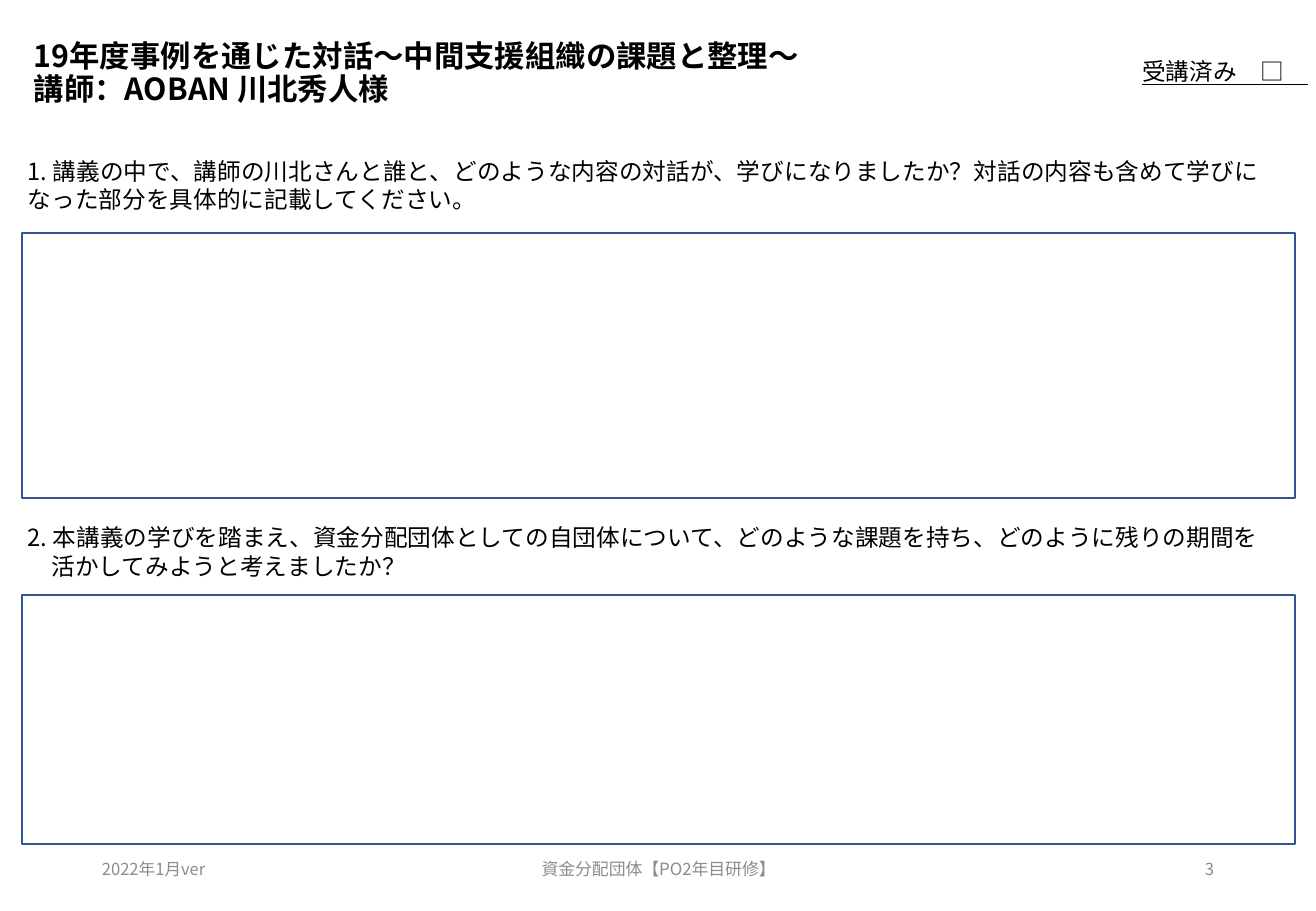
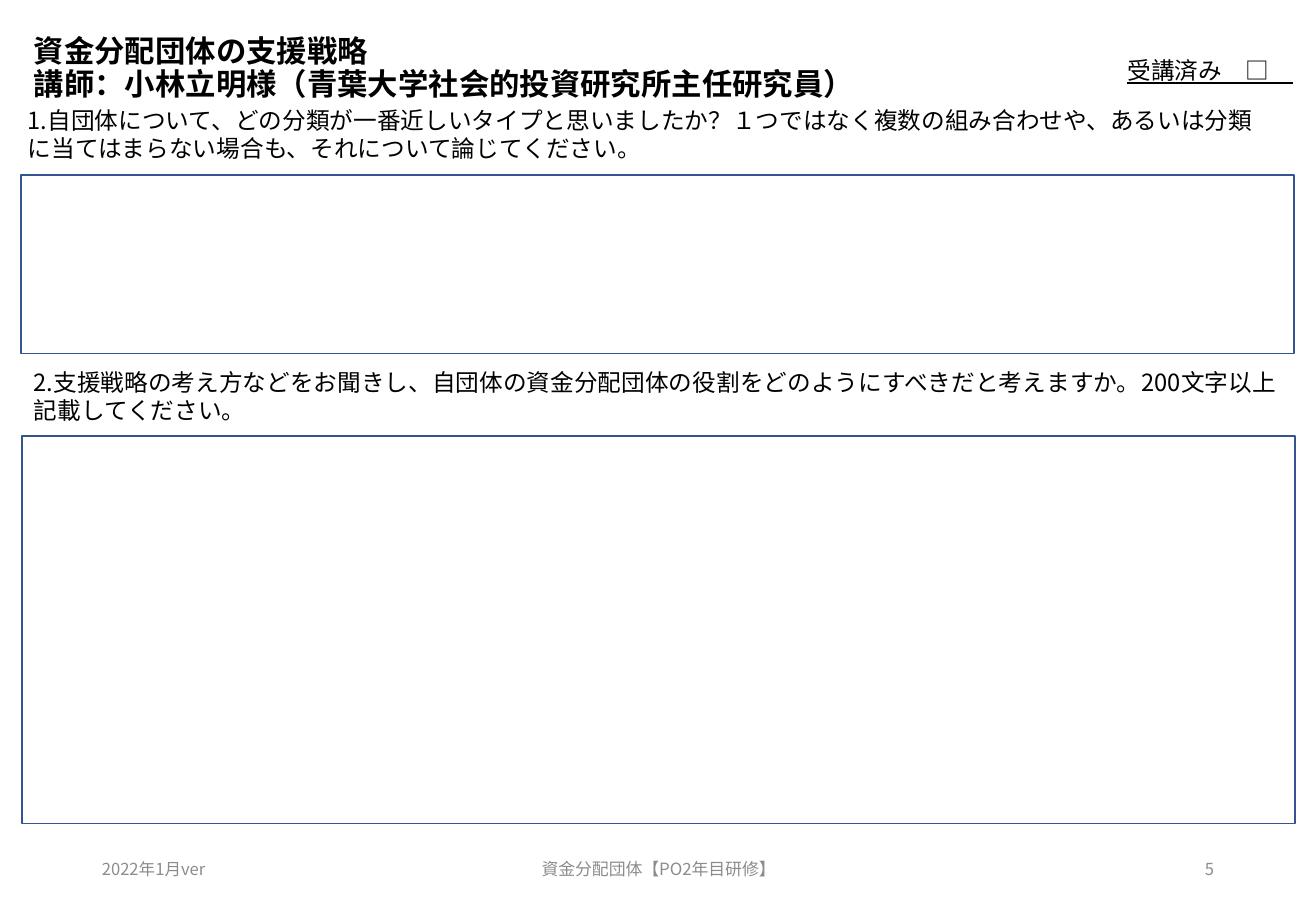
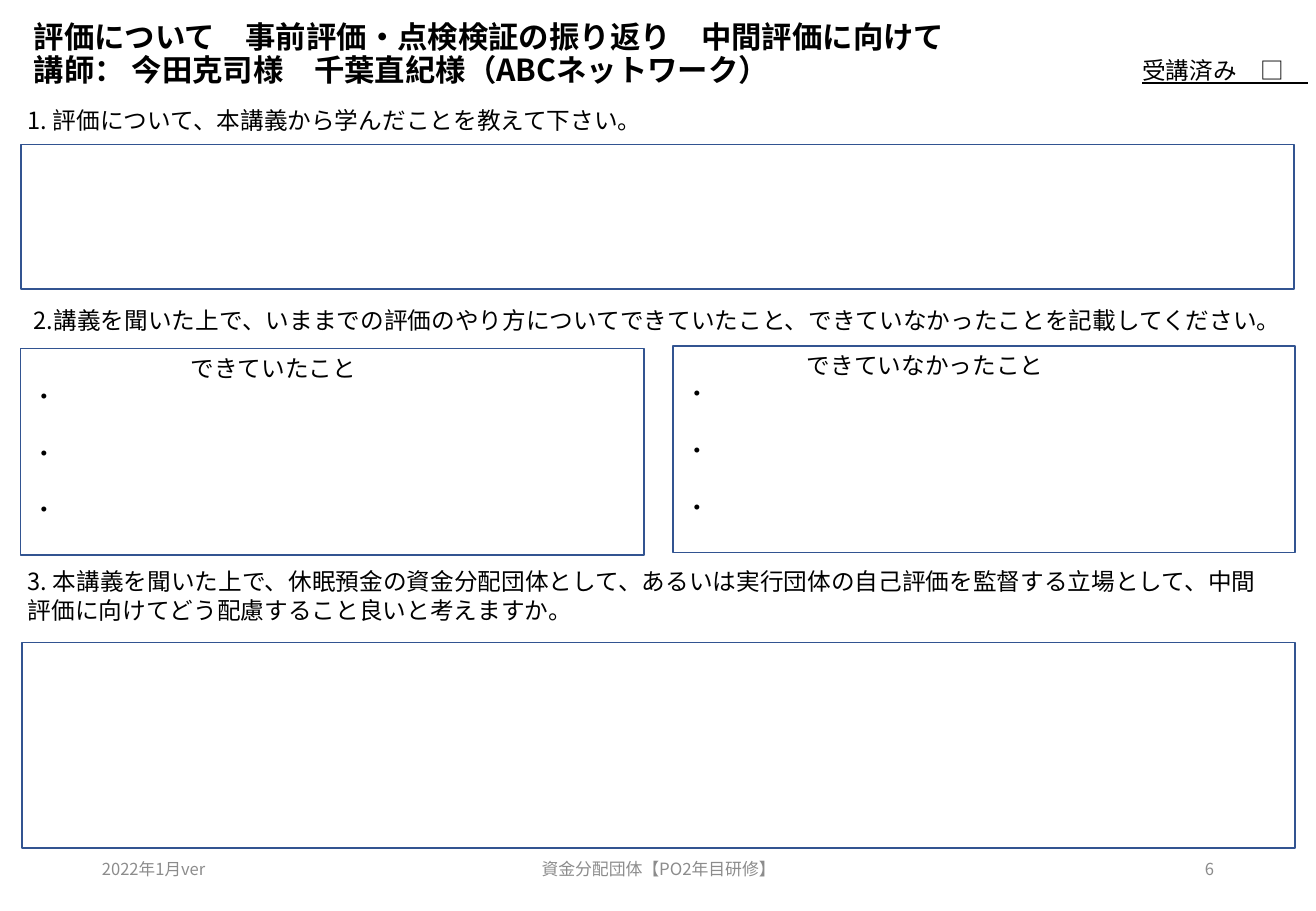
from lxml.etree import SubElement
from pptx import Presentation
from pptx.dml.color import RGBColor
from pptx.enum.shapes import MSO_SHAPE
from pptx.enum.text import MSO_ANCHOR, PP_ALIGN
from pptx.oxml.ns import qn
from pptx.util import Inches, Pt

FONT = "Noto Sans CJK JP"
BLACK = RGBColor(0x00, 0x00, 0x00)
GRAY = RGBColor(0x8C, 0x8C, 0x8C)
WHITE = RGBColor(0xFF, 0xFF, 0xFF)
BLUE = RGBColor(0x32, 0x54, 0x91)

BODY = 14
LEFT = 0.18
WIDE = 10.48
PAD = 0.1
FOOT_TOP = 6.95


def add_run(para, text, size=BODY, color=BLACK, bold=False, under=False):
    run = para.add_run()
    run.text = text
    font = run.font
    font.name, font.size, font.bold, font.underline = FONT, Pt(size), bold, under
    font.color.rgb = color
    SubElement(font._element, qn("a:ea")).set("typeface", FONT)


def add_para(frame, first):
    return frame.paragraphs[0] if first else frame.add_paragraph()


def add_frame(slide, x, y, w, h, anchor=MSO_ANCHOR.TOP):
    box = slide.shapes.add_textbox(Inches(x), Inches(y), Inches(w), Inches(h))
    frame = box.text_frame
    frame.word_wrap = True
    frame.vertical_anchor = anchor
    return frame


def add_title(slide, lines, y, h, w=9.34):
    para = add_frame(slide, LEFT, y, w, h, MSO_ANCHOR.MIDDLE).paragraphs[0]
    para.line_spacing = 0.9
    for i, line in enumerate(lines):
        if i:
            para.add_line_break()
        add_run(para, line, size=18, bold=True)


def add_ask(slide, lines, y, x=0.13, w=WIDE):
    """Add a question; any line after the first is indented by one character."""
    frame = add_frame(slide, x, y, w, 0.57 if len(lines) > 1 else 0.34)
    for i, line in enumerate(lines):
        para = add_para(frame, i == 0)
        if i:
            para._p.get_or_add_pPr().set("marL", str(Pt(BODY)))
        add_run(para, line)


def add_box(slide, y, h, x=LEFT, w=WIDE):
    box = slide.shapes.add_shape(
        MSO_SHAPE.RECTANGLE, Inches(x), Inches(y), Inches(w), Inches(h))
    box.shadow.inherit = False
    box.fill.solid()
    box.fill.fore_color.rgb = WHITE
    box.line.color.rgb = BLUE
    box.line.width = Pt(1)
    return box


def add_list(slide, head, x, y, w):
    """Add an answer box with a heading left of centre and three points."""
    frame = add_box(slide, y, 1.7, x, w).text_frame
    frame.word_wrap = True
    frame.vertical_anchor = MSO_ANCHOR.TOP
    frame.margin_top = Inches(0.04)
    indent = (Inches(w - 2 * PAD) - Pt(BODY) * (len(head) + 5)) // 2
    for i, text in enumerate([head, "・", "・", "・"]):
        para = add_para(frame, i == 0)
        para.alignment = PP_ALIGN.LEFT
        if i == 0:
            para._p.get_or_add_pPr().set("marL", str(indent))
        elif i > 1:
            para.space_before = Pt(16.8)
        add_run(para, text)


def add_check(slide, x=9.3, y=0.41):
    frame = add_frame(slide, x, y, 2.01, 0.34)
    add_run(frame.paragraphs[0], "受講済み　□　", under=True)


def add_foot(slide, page):
    parts = [
        (0.74, 2.44, PP_ALIGN.LEFT, "2022年1月ver", 9.8),
        (3.59, 3.66, PP_ALIGN.CENTER, "資金分配団体【PO2年目研修】", 10),
        (7.65, 2.44, PP_ALIGN.RIGHT, str(page), 9.8),
    ]
    for x, w, align, text, size in parts:
        frame = add_frame(slide, x, FOOT_TOP, w, 0.4, MSO_ANCHOR.MIDDLE)
        para = frame.paragraphs[0]
        para.alignment = align
        add_run(para, text, size, GRAY)


def add_slide(deck, page):
    slide = deck.slides.add_slide(deck.slide_layouts[6])
    add_foot(slide, page)
    return slide


def add_talk(deck):
    slide = add_slide(deck, 3)
    add_title(slide, ["19年度事例を通じた対話～中間支援組織の課題と整理～",
                      "講師：AOBAN\u00a0川北秀人様".replace("\u00a0", " ")], 0.15, 0.92)
    add_check(slide, y=0.42)
    add_ask(slide, ["1. 講義の中で、講師の川北さんと誰と、どのような内容の対話が、"
                    "学びになりましたか？対話の内容も含めて学びになった部分を"
                    "具体的に記載してください。"], 1.24, w=10.39)
    add_box(slide, 1.92, 2.18)
    add_ask(slide, ["2. 本講義の学びを踏まえ、資金分配団体としての自団体について、"
                    "どのような課題を持ち、どのように残りの期間を",
                    "活かしてみようと考えましたか？"], 4.26)
    add_box(slide, 4.9, 2.05)


def add_plan(deck):
    slide = add_slide(deck, 5)
    add_title(slide, ["資金分配団体の支援戦略",
                      "講師：小林立明様（青葉大学社会的投資研究所主任研究員）"], 0.14, 0.86)
    add_check(slide, x=9.18)
    add_ask(slide, ["1.自団体について、どの分類が一番近しいタイプと思いましたか？"
                    "１つではなく複数の組み合わせや、あるいは分類に当てはまらない"
                    "場合も、それについて論じてください。"], 0.82, w=10.39)
    add_box(slide, 1.44, 1.47, x=0.17)
    add_ask(slide, ["2.支援戦略の考え方などをお聞きし、自団体の資金分配団体の役割を"
                    "どのようにすべきだと考えますか。200文字以上記載してください。"],
            2.98, x=LEFT)
    add_box(slide, 3.59, 3.19)


def add_review(deck):
    slide = add_slide(deck, 6)
    add_title(slide, ["評価について　事前評価・点検検証の振り返り　中間評価に向けて",
                      "講師： 今田克司様　千葉直紀様（ABCネットワーク）"],
              -0.04, 0.99, w=9.92)
    add_check(slide)
    add_ask(slide, ["1. 評価について、本講義から学んだことを教えて下さい。"], 0.82, w=10.39)
    add_box(slide, 1.19, 1.19, x=0.17)
    add_ask(slide, ["2.講義を聞いた上で、いままでの評価のやり方についてできていたこと、"
                    "できていなかったことを記載してください。"], 2.47, x=LEFT)
    add_list(slide, "できていたこと", 0.17, 2.87, 5.13)
    add_list(slide, "できていなかったこと", 5.54, 2.85, 5.12)
    add_ask(slide, ["3. 本講義を聞いた上で、休眠預金の資金分配団体として、"
                    "あるいは実行団体の自己評価を監督する立場として、"
                    "中間評価に向けてどう配慮すること良いと考えますか。"], 4.62)
    add_box(slide, 5.29, 1.69)


def main():
    deck = Presentation()
    deck.slide_width, deck.slide_height = Inches(10.83), Inches(7.5)
    add_talk(deck)
    add_plan(deck)
    add_review(deck)
    deck.save("out.pptx")


if __name__ == "__main__":
    main()
